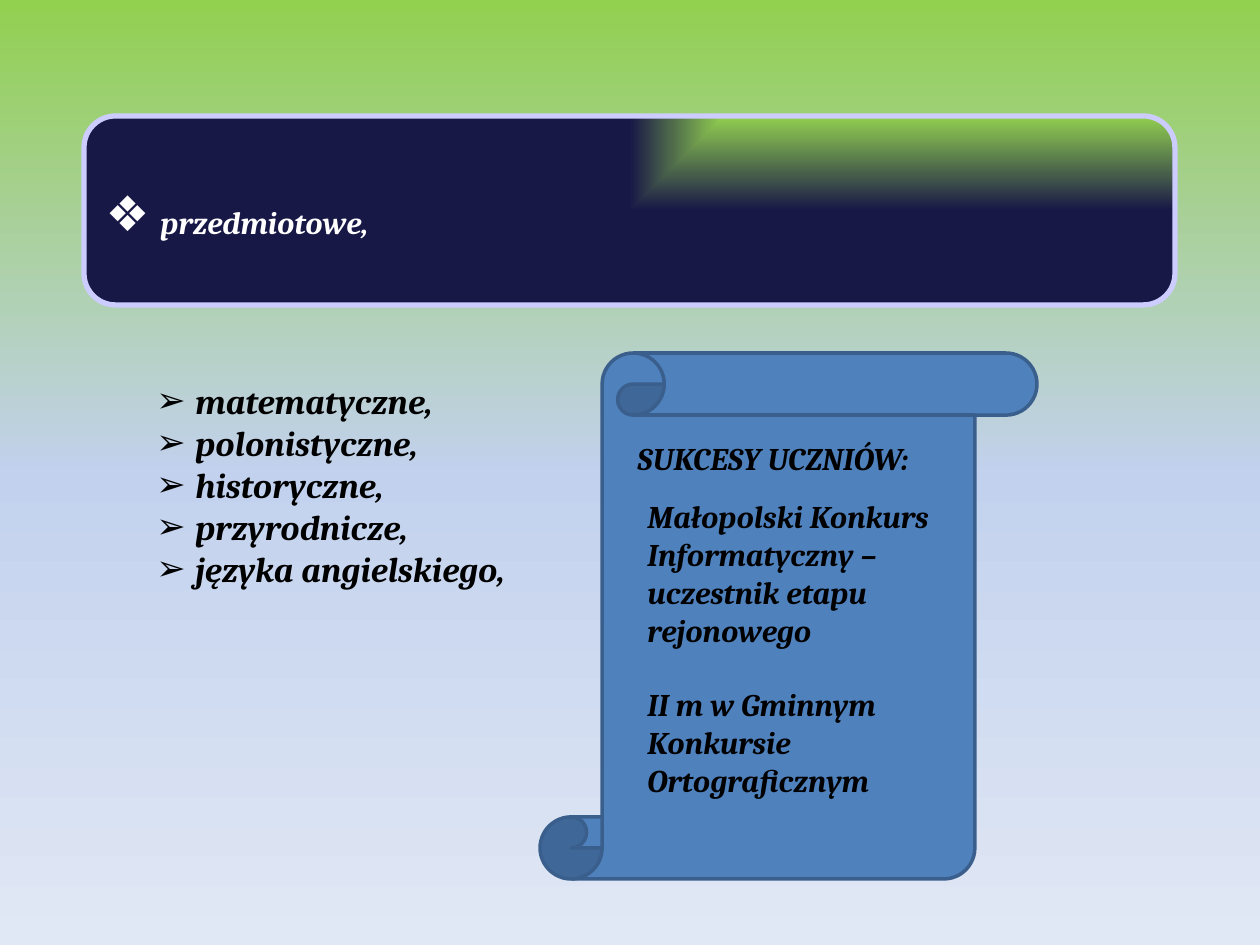
import pptx
import pptx.util
import pptx.dml.color
import pptx.enum.shapes
import pptx.enum.text
import pptx.oxml
import pptx.oxml.ns

SCALE = 914400 / 126
SHAPES = pptx.enum.shapes.MSO_SHAPE
ANCHORS = pptx.enum.text.MSO_ANCHOR
ALIGN = pptx.enum.text.PP_ALIGN
SERIF = {"name": "Cambria", "bold": True, "italic": True}


def px(length):
    return round(length * SCALE)


def color(value):
    return pptx.dml.color.RGBColor.from_string(value)


def style_span(span, size, ink, **formats):
    span.font.size = pptx.util.Pt(size)
    span.font.color.rgb = color(ink)
    for name, value in formats.items():
        setattr(span.font, name, value)


def set_gradient(fill, parent, stops, direction):
    fill.solid()
    solid = parent.find(pptx.oxml.ns.qn("a:solidFill"))
    marks = "".join(
        f'<a:gs pos="{pos * 1000}"><a:srgbClr val="{value}"/></a:gs>'
        for pos, value in stops
    )
    gradient = pptx.oxml.parse_xml(
        f'<a:gradFill {pptx.oxml.ns.nsdecls("a")} rotWithShape="1">'
        f"<a:gsLst>{marks}</a:gsLst>{direction}</a:gradFill>"
    )
    parent.replace(solid, gradient)


def set_bullet(para, symbol):
    properties = para._p.get_or_add_pPr()
    properties.set("marL", str(px(39)))
    properties.set("indent", str(px(-39)))
    namespace = pptx.oxml.ns.nsdecls("a")
    properties.append(pptx.oxml.parse_xml(f'<a:buFont {namespace} typeface="Arial"/>'))
    properties.append(pptx.oxml.parse_xml(f'<a:buChar {namespace} char="{symbol}"/>'))


def add_panel(page, kind, place, line, width):
    panel = page.shapes.add_shape(kind, *map(px, place))
    panel.shadow.inherit = False
    panel.line.color.rgb = color(line)
    panel.line.width = pptx.util.Pt(width)
    return panel


def add_text(page, place, lines, size, bullet=None, gap=0):
    box = page.shapes.add_textbox(*map(px, place))
    frame = box.text_frame
    frame.word_wrap = True
    for index, line in enumerate(lines):
        para = frame.add_paragraph() if index else frame.paragraphs[0]
        if index and gap:
            para.space_before = pptx.util.Pt(gap)
        if bullet:
            set_bullet(para, bullet)
        span = para.add_run()
        span.text = line
        style_span(span, size, "000000", **SERIF)


def add_banner(page):
    banner = add_panel(page, SHAPES.ROUNDED_RECTANGLE, (84, 116, 1091, 189), "CCCCFF", 3)
    set_gradient(
        banner.fill, banner._element.spPr, [(0, "92D050"), (100, "181847")],
        '<a:path path="rect"><a:fillToRect l="100000" b="100000"/></a:path>',
    )
    frame = banner.text_frame
    frame.word_wrap = False
    frame.vertical_anchor = ANCHORS.MIDDLE
    para = frame.paragraphs[0]
    para.alignment = ALIGN.LEFT
    para.line_spacing = 1.15
    set_bullet(para, "❖")
    for words, size, formats in ((" ", 28, {"name": "Calibri"}), ("przedmiotowe,", 18, SERIF)):
        span = para.add_run()
        span.text = words
        style_span(span, size, "FFFFFF", **formats)


def add_scroll(page):
    scroll = add_panel(page, SHAPES.VERTICAL_SCROLL, (540, 353, 497, 526), "3A5F8C", 2)
    scroll.fill.solid()
    scroll.fill.fore_color.rgb = color("4F81BD")


def main():
    deck = pptx.Presentation()
    deck.slide_width, deck.slide_height = px(1260), px(945)
    page = deck.slides.add_slide(deck.slide_layouts[6])
    backdrop = page.background.fill
    backdrop.solid()
    set_gradient(
        backdrop, page._element.find(".//" + pptx.oxml.ns.qn("p:bgPr")),
        [(0, "92D050"), (50, "C2D1ED"), (100, "E1E8F5")],
        '<a:lin ang="5400000" scaled="0"/>',
    )
    add_banner(page)
    subjects = ["matematyczne,", "polonistyczne,", "historyczne,", "przyrodnicze,",
                "języka angielskiego,"]
    add_text(page, (144, 373, 893, 301), subjects, 20, bullet="➢")
    add_scroll(page)
    add_text(page, (625, 433, 338, 50), ["SUKCESY UCZNIÓW:"], 18)
    successes = ["Małopolski Konkurs Informatyczny – uczestnik etapu rejonowego",
                 "II m w Gminnym Konkursie Ortograficznym"]
    add_text(page, (635, 491, 318, 318), successes, 18, gap=21)
    deck.save("out.pptx")


if __name__ == "__main__":
    main()
